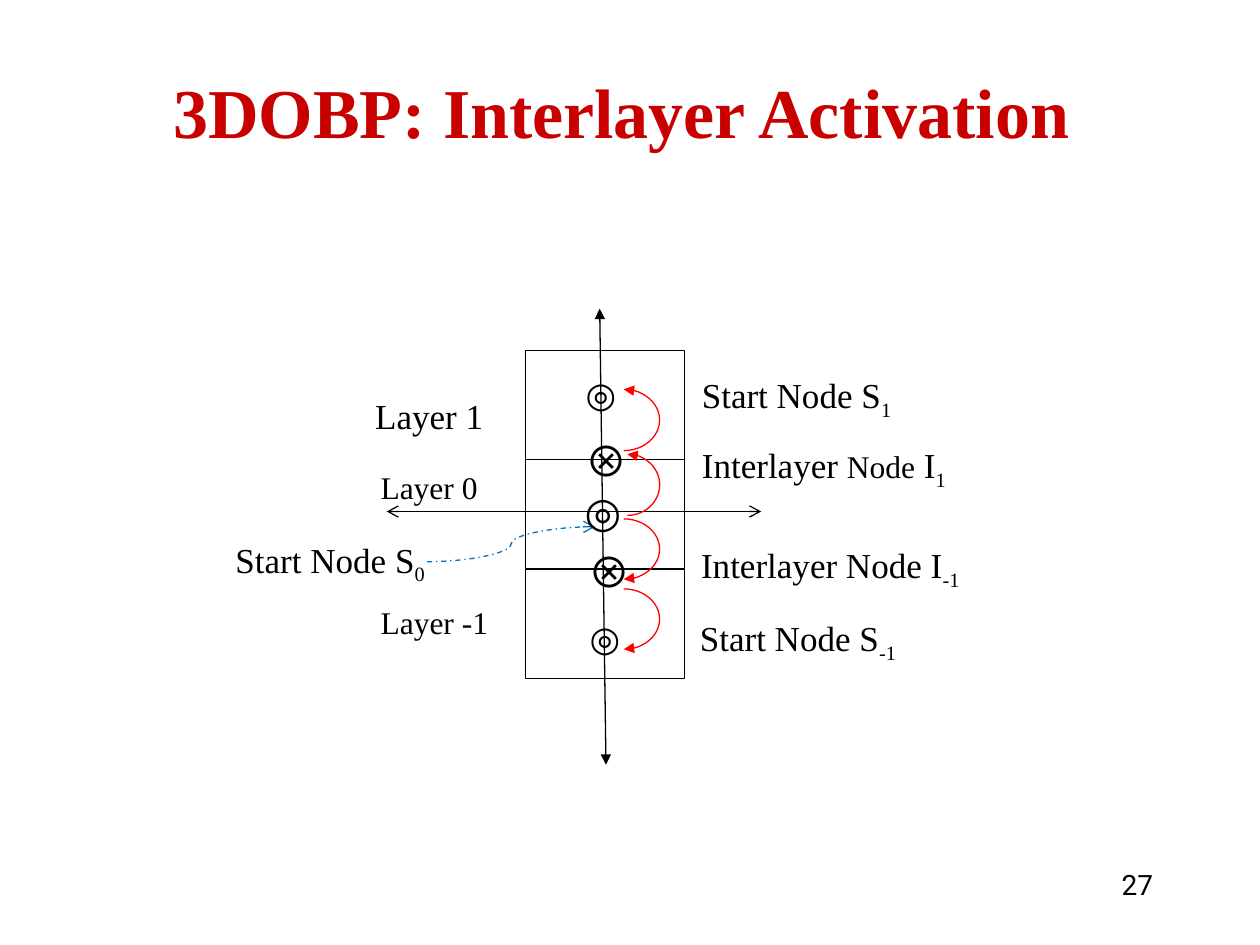
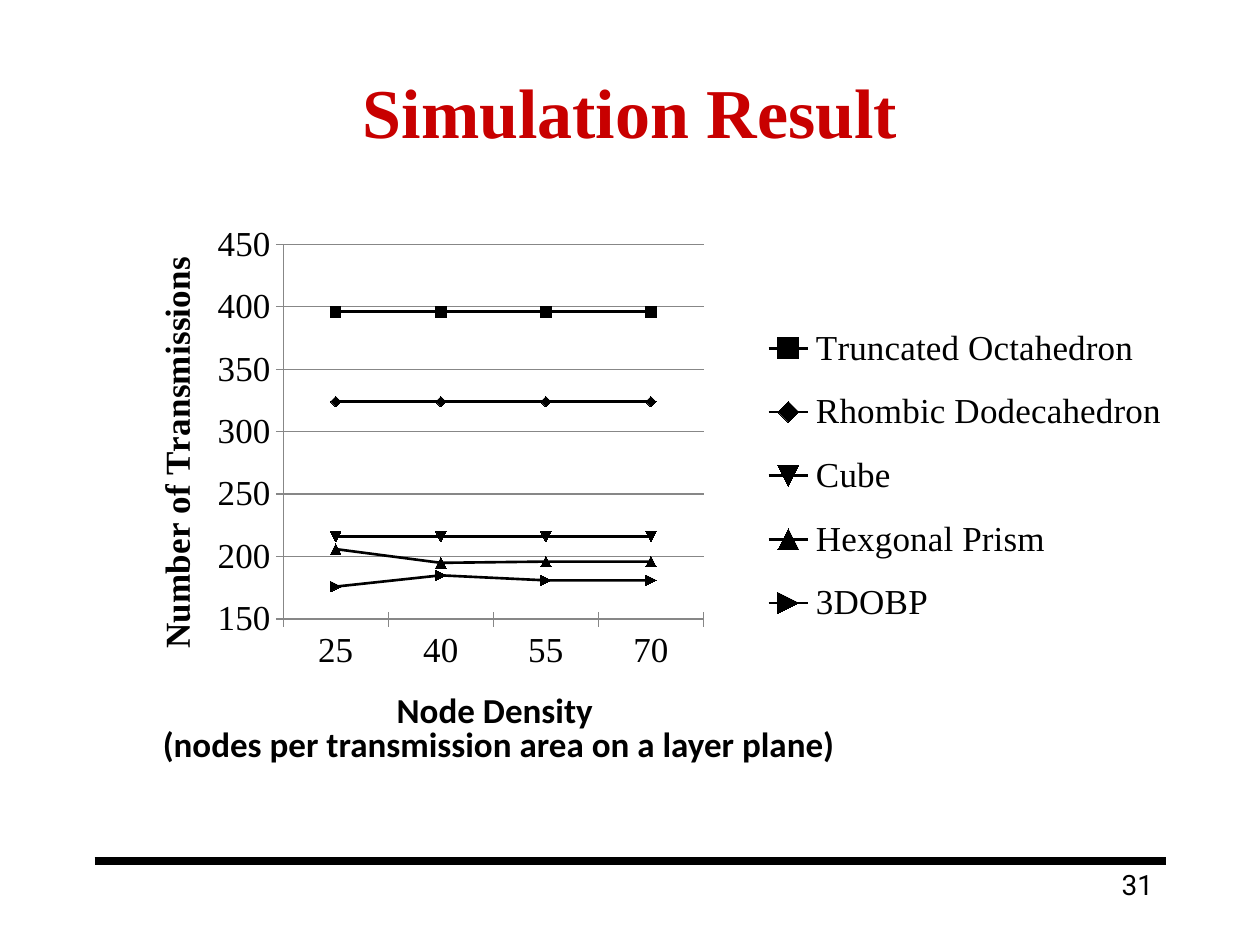
import dataclasses

import lxml.etree
import pptx
import pptx.chart.data
import pptx.dml.color
import pptx.enum.chart
import pptx.enum.dml
import pptx.enum.shapes
import pptx.enum.text
import pptx.oxml.ns
import pptx.util

Pt = pptx.util.Pt
qn = pptx.oxml.ns.qn
Align = pptx.enum.text.PP_ALIGN
Connector = pptx.enum.shapes.MSO_CONNECTOR
Preset = pptx.enum.shapes.MSO_SHAPE


def rgb(code):
    return pptx.dml.color.RGBColor.from_string(code)


@dataclasses.dataclass(frozen=True)
class Theme:
    ink = rgb("000000")
    title = rgb("C80000")
    activation = rgb("FF0000")
    pointer = rgb("0070C0")
    grid = rgb("878787")
    serif: str = "Times New Roman"
    sans: str = "Calibri"
    number_font: str = "Roboto"
    symbol_font: str = "Noto Sans CJK TC"
    title_size: int = 40
    symbol_size: int = 24
    label_size: int = 20
    small_size: int = 18
    number_size: int = 16
    space_size: int = 11


THEME = Theme()


def style_font(font, size, name=THEME.serif, color=THEME.ink, bold=False):
    font.size = Pt(size)
    font.name = name
    font.bold = bold
    font.color.rgb = color


def add_page(deck, title, number):
    page = deck.slides.add_slide(deck.slide_layouts[5])
    box = page.shapes.title
    box.left, box.top, box.width, box.height = Pt(54), Pt(18), Pt(612), Pt(90)
    box.text_frame.vertical_anchor = pptx.enum.text.MSO_ANCHOR.MIDDLE
    box.text_frame.text = title
    para = box.text_frame.paragraphs[0]
    para.alignment = Align.CENTER
    style_font(para.font, THEME.title_size, color=THEME.title, bold=True)
    add_label(page, (516, 492, 150, 36), [number], THEME.number_size,
              Align.RIGHT, THEME.number_font)
    return page


def add_label(page, place, spans, size=THEME.label_size, align=Align.LEFT,
              font=THEME.serif, bold=False, subscript=None):
    box = page.shapes.add_textbox(*map(Pt, place))
    box.text_frame.word_wrap = True
    para = box.text_frame.paragraphs[0]
    para.alignment = align
    style_font(para.font, size, font, bold=bold)
    for span in spans:
        text, span_size = span if isinstance(span, tuple) else (span, None)
        run = para.add_run()
        run.text = text
        if span_size:
            run.font.size = Pt(span_size)
    if subscript:
        run = para.add_run()
        run.text = subscript
        run.font._element.set("baseline", "-25000")
    return para


def style_line(shape, color, width, head=None, tail=None):
    shape.line.color.rgb = color
    shape.line.width = Pt(width)
    outline = shape.line._get_or_add_ln()
    for end, kind in (("a:headEnd", head), ("a:tailEnd", tail)):
        if kind:
            lxml.etree.SubElement(outline, qn(end)).set("type", kind)


def add_line(page, start, finish, color=THEME.ink, width=0.75,
             kind=Connector.STRAIGHT, dash=None, head=None, tail=None):
    line = page.shapes.add_connector(kind, *map(Pt, start + finish))
    if dash:
        line.line.dash_style = dash
    style_line(line, color, width, head, tail)
    lxml.etree.SubElement(line._element.spPr, qn("a:effectLst"))


def add_outline(page, preset, place, color, width, **ends):
    shape = page.shapes.add_shape(preset, *map(Pt, place))
    shape.shadow.inherit = False
    shape.fill.background()
    style_line(shape, color, width, **ends)
    return shape


def add_activation_arc(page, place, **ends):
    arc = add_outline(page, Preset.ARC, place, THEME.activation, 0.75, **ends)
    arc.adjustments[0] = 162
    arc.adjustments[1] = 54


def set_layout(element, index, **values):
    for old in element.findall(qn("c:layout")):
        element.remove(old)
    layout = lxml.etree.Element(qn("c:layout"))
    manual = lxml.etree.SubElement(layout, qn("c:manualLayout"))
    for tag, value in values.items():
        lxml.etree.SubElement(manual, qn("c:" + tag)).set("val", str(value))
    element.insert(index, layout)


def add_transmission_chart(page, place, categories, results):
    data = pptx.chart.data.CategoryChartData()
    data.categories = categories
    for name, values in results.items():
        data.add_series(name, values)
    chart = page.shapes.add_chart(
        pptx.enum.chart.XL_CHART_TYPE.LINE_MARKERS, *map(Pt, place), data).chart
    style_font(chart.font, THEME.label_size)
    chart.has_title = False
    plot = chart.plots[0]
    plot.vary_by_categories = False
    for series in plot.series:
        series.smooth = False
        series.format.line.color.rgb = THEME.ink
        series.format.line.width = Pt(1.5)
        series.marker.style = pptx.enum.chart.XL_MARKER_STYLE.AUTOMATIC
        series.marker.size = 6
        series.marker.format.fill.solid()
        series.marker.format.fill.fore_color.rgb = THEME.ink
        series.marker.format.line.color.rgb = THEME.ink

    for axis in (chart.category_axis, chart.value_axis):
        axis.major_tick_mark = pptx.enum.chart.XL_TICK_MARK.CROSS
        axis.format.line.color.rgb = THEME.grid
    values = chart.value_axis
    values.minimum_scale = 150
    values.has_major_gridlines = True
    values.major_gridlines.format.line.color.rgb = THEME.grid
    title = values.axis_title
    title.text_frame.text = "Number of Transmissions"
    style_font(title.text_frame.paragraphs[0].font, THEME.label_size, bold=True)

    chart.has_legend = True
    chart.legend.position = pptx.enum.chart.XL_LEGEND_POSITION.RIGHT
    chart.legend.include_in_layout = False
    edges = {"xMode": "edge", "yMode": "edge"}
    plot_area = chart._chartSpace.chart.plotArea
    set_layout(plot_area, 0, layoutTarget="inner", **edges,
               x=0.19, y=0.038, w=0.373, h=0.7)
    set_layout(title._element, 1, **edges, x=0.07, y=0.05)
    set_layout(chart.legend._element, 1, **edges, x=0.61, y=0.15, w=0.37, h=0.64)


def build_activation_page(deck):
    page = add_page(deck, "3DOBP: Interlayer Activation ", "27")
    small = THEME.small_size
    add_label(page, (156, 222, 130, 34), ["Layer 1", (" ", THEME.space_size)],
              align=Align.RIGHT)
    add_label(page, (184, 264, 96, 22), ["Layer 0"], small, Align.RIGHT)
    add_label(page, (190, 341, 96, 32), ["Layer -1"], small, Align.RIGHT)
    for place, spans, subscript, align in (
        ((127.5, 304, 158, 25), ["Start Node S"], "0", Align.LEFT),
        ((394, 210, 158, 22), ["Start Node S"], "1", Align.LEFT),
        ((394, 250, 207, 20), ["Interlayer ", ("Node", small), " I"], "1", Align.LEFT),
        ((348.5, 307, 252, 19), ["Interlayer Node I"], "-1", Align.CENTER),
        ((377, 349, 158, 22), ["Start Node S"], "-1", Align.CENTER),
    ):
        add_label(page, place, spans, align=align, subscript=subscript)

    layer_height = 62.5
    for layer in range(3):
        add_outline(page, Preset.RECTANGLE,
                    (300, 200 + layer * layer_height, 91, layer_height),
                    THEME.ink, 0.25)
    add_line(page, (346.3, 437), (342.7, 176.4), head="triangle", tail="triangle")
    add_line(page, (221, 292.3), (435, 292.3), head="arrow", tail="arrow")
    add_line(page, (244, 321), (340, 301), THEME.pointer, kind=Connector.CURVE,
             dash=pptx.enum.dml.MSO_LINE.DASH_DOT, tail="arrow")

    for left, top, size in ((327.6, 209.5, THEME.label_size),
                            (327, 273.6, THEME.symbol_size),
                            (329.8, 349, THEME.label_size)):
        add_label(page, (left, top, 48, 27), ["◎"], size)
    for left, top in ((327.6, 245.5), (329, 309)):
        add_label(page, (left, top, 44, 37), ["⊗"], THEME.symbol_size,
                  font=THEME.symbol_font)

    for place, end in (((336, 222.5, 41, 35), "head"),
                       ((340, 259.5, 37, 35), "head"),
                       ((336, 296.5, 41, 34.5), "tail"),
                       ((336, 336.5, 41, 34.5), "tail")):
        add_activation_arc(page, place, **{end: "triangle"})


def build_result_page(deck):
    page = add_page(deck, "Simulation Result", "31")
    add_line(page, (54, 492), (666, 492), width=4.5)
    add_transmission_chart(
        page, (39.5, 128, 644, 306), ["25", "40", "55", "70"],
        {
            "Truncated Octahedron": [396] * 4,
            "Rhombic Dodecahedron": [324] * 4,
            "Cube": [216] * 4,
            "Hexgonal Prism": [206, 195, 196, 196],
            "3DOBP": [176, 185, 181, 181],
        })
    para = add_label(page, (76.5, 394.5, 417, 78), ["Node Density "],
                     align=Align.CENTER, font=THEME.sans, bold=True)
    para.line_spacing = 0.8
    para.add_line_break()
    para.add_run().text = "(nodes per transmission area on a layer plane)"


def main():
    deck = pptx.Presentation()
    deck.slide_width, deck.slide_height = Pt(720), Pt(540)
    build_activation_page(deck)
    build_result_page(deck)
    deck.save("out.pptx")


if __name__ == "__main__":
    main()
